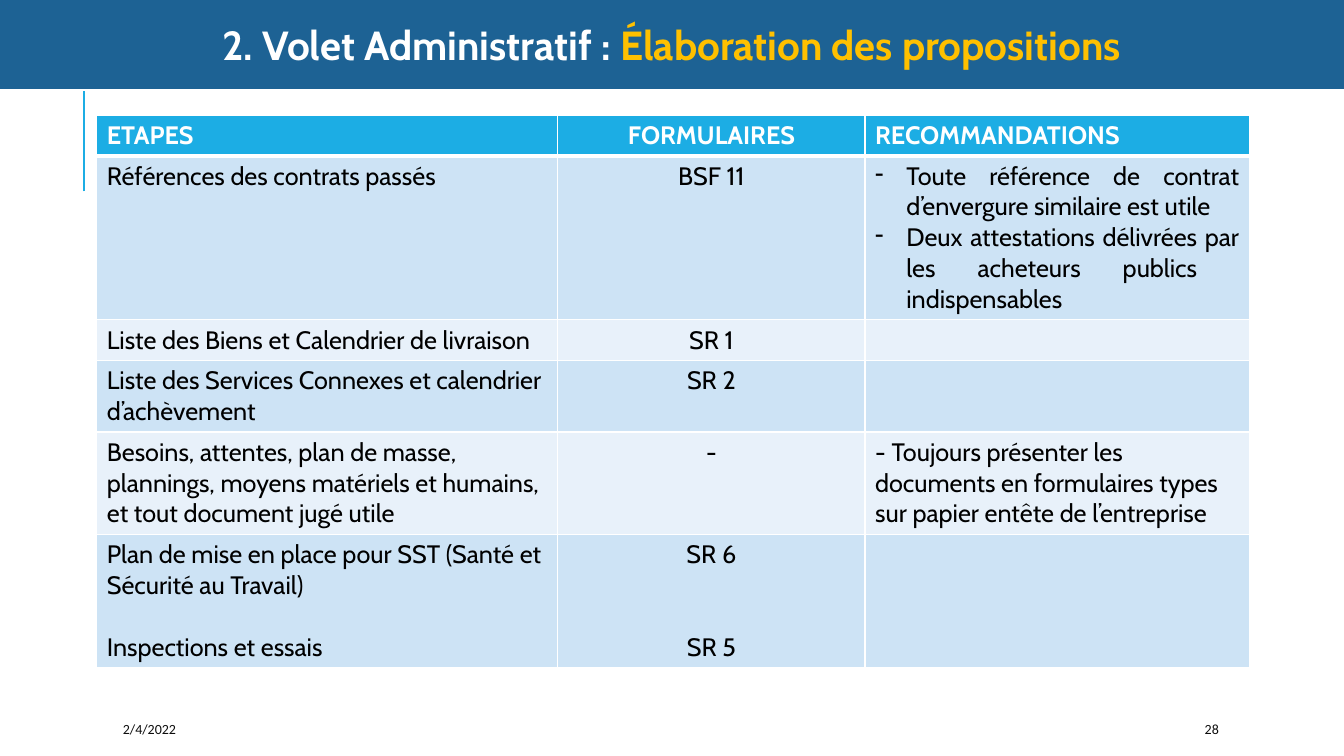
from lxml import etree
from pptx import Presentation
from pptx.dml.color import RGBColor
from pptx.enum.shapes import MSO_CONNECTOR as Conn
from pptx.enum.text import MSO_ANCHOR as Anchor, MSO_AUTO_SIZE as Auto, PP_ALIGN as Align
from pptx.oxml.ns import qn
from pptx.util import Inches, Pt

WIDE, HIGH = 13.33, 7.5
LINE = 4.07  # one 18 pt text line, in percent of the slide height
PAD = 1.33   # top and bottom cell margins, in percent

WHITE, BLACK, GOLD = "FFFFFF", "000000", "FFC000"
NAVY, SKY = "1D6294", "1CADE4"
BANDS = ["CDE3F5", "E8F1FA"]

HEADS = ["ETAPES", "FORMULAIRES", "RECOMMANDATIONS"]
# Each row: text lines it takes, then three cells, each a list of paragraphs.
ROWS = [
    (5, ["Références des contrats passés"], ["BSF 11"],
     ["Toute référence de contrat d’envergure similaire est utile",
      "Deux attestations délivrées par les acheteurs publics  indispensables"]),
    (1, ["Liste des Biens et Calendrier de livraison"], ["SR 1"], []),
    (2, ["Liste des Services Connexes et calendrier d’achèvement"], ["SR 2"], []),
    (3, ["Besoins, attentes, plan de masse, plannings, moyens matériels et humains, "
         "et tout document jugé utile"], ["-"],
     ["- Toujours présenter les documents en formulaires types sur papier entête "
      "de l’entreprise"]),
    (4, ["Plan de mise en place pour SST (Santé et Sécurité au Travail)",
         "Inspections et essais"], ["SR 6", "SR 5"], []),
]
ALIGNS = [Align.LEFT, Align.CENTER, Align.LEFT]
GAPS = [22, 44, 0]  # space before a second paragraph, by column


def rgb(code):
    return RGBColor.from_string(code)


def put(item, values):
    for key, value in values.items():
        setattr(item, key, value)


def across(share):
    return Inches(WIDE * share / 100)


def down(share):
    return Inches(HIGH * share / 100)


def box(x, y, w, h):
    """Turn percent shares of the slide into a left, top, width, height dict."""
    return dict(left=across(x), top=down(y), width=across(w), height=down(h))


class Deck:
    """Holds the text styles and the current slide."""

    styles = {
        "title": dict(name="Cabin", size=Pt(29), bold=True),
        "head": dict(name="Cabin", size=Pt(18), bold=True),
        "cell": dict(name="Cabin", size=Pt(18), bold=False),
        "foot": dict(name="Calibri", size=Pt(10), bold=False),
    }

    def __init__(self):
        self.show = Presentation()
        put(self.show, dict(slide_width=Inches(WIDE), slide_height=Inches(HIGH)))
        self.slide = self.show.slides.add_slide(self.show.slide_layouts[5])

    def say(self, para, text, style, color, **form):
        run = para.add_run()
        run.text = text
        put(run.font, self.styles[style])
        run.font.color.rgb = rgb(color)
        put(para, form)

    def title(self, parts, area):
        band = self.slide.shapes.title
        put(band, area)
        band.fill.solid()
        band.fill.fore_color.rgb = rgb(NAVY)
        frame = band.text_frame
        put(frame, dict(auto_size=Auto.NONE, word_wrap=True, vertical_anchor=Anchor.MIDDLE,
                        margin_left=Inches(0.11), margin_right=Inches(0.11),
                        margin_top=Inches(0.06), margin_bottom=Inches(0.06)))
        for text, color in parts:
            self.say(frame.paragraphs[0], text, "title", color, alignment=Align.CENTER)

    def note(self, text, area):
        frame = self.slide.shapes.add_textbox(**area).text_frame
        put(frame, dict(word_wrap=True, vertical_anchor=Anchor.MIDDLE))
        self.say(frame.paragraphs[0], text, "foot", "0D0D0D")

    def rule(self, x, top, end):
        line = self.slide.shapes.add_connector(
            Conn.STRAIGHT, across(x), down(end), across(x), down(top))
        line.line.color.rgb = rgb(SKY)
        line.line.width = Pt(1.5)
        etree.SubElement(line._element.spPr, qn("a:effectLst"))

    def table(self, x, y, widths, heights):
        area = box(x, y, sum(widths), sum(heights))
        grid = self.slide.shapes.add_table(len(heights), len(widths), **area).table
        for col, share in zip(grid.columns, widths):
            col.width = across(share)
        for row, share in zip(grid.rows, heights):
            row.height = down(share)
        return grid

    def cell(self, cell, texts, style, color, fill, edges, align, gap=0):
        """Fill one cell; edges are the left, right, top and bottom line widths."""
        self.edge(cell, edges)
        cell.fill.solid()
        cell.fill.fore_color.rgb = rgb(fill)
        frame = cell.text_frame
        for i, text in enumerate(texts):
            para = frame.add_paragraph() if i else frame.paragraphs[0]
            self.say(para, text, style, color, alignment=align,
                     space_before=Pt(gap if i else 0))

    def edge(self, cell, widths):
        props = cell._tc.get_or_add_tcPr()
        for side, width in zip("LRTB", widths):
            line = etree.SubElement(props, qn(f"a:ln{side}"), w=str(Pt(width)))
            paint = etree.SubElement(line, qn("a:solidFill"))
            etree.SubElement(paint, qn("a:srgbClr"), val=WHITE)

    def dash(self, cell):
        """Make the paragraphs of a cell a justified list with dashes."""
        hang = Inches(0.31)
        for para in cell.text_frame.paragraphs:
            para.alignment = Align.JUSTIFY
            props = para._p.get_or_add_pPr()
            props.set("marL", str(hang))
            props.set("indent", str(-hang))
            etree.SubElement(props, qn("a:buChar"), char="-")


def main():
    deck = Deck()
    deck.rule(6.22, 12, 25.33)
    deck.note("2/4/2022", box(8.4, 94.4, 17.7, 4))
    deck.note("28", box(88.9, 94.4, 7.95, 4))
    deck.title([("2. Volet Administratif : ", WHITE),
                ("Élaboration des propositions", GOLD)], box(0, 0, 100, 11.75))

    widths = [85.75 * part / 15 for part in (6, 4, 5)]
    heights = [PAD + LINE * count for count in [1] + [row[0] for row in ROWS]]
    grid = deck.table(7.2, 15.2, widths, heights)
    for c, (head, align) in enumerate(zip(HEADS, ALIGNS)):
        deck.cell(grid.cell(0, c), [head], "head", WHITE, SKY, (1, 1, 1, 3), align)
    for r, (_, *cells) in enumerate(ROWS, 1):
        edges = (1, 1, 3 if r == 1 else 1, 1)
        for c, (texts, align, gap) in enumerate(zip(cells, ALIGNS, GAPS)):
            deck.cell(grid.cell(r, c), texts, "cell", BLACK, BANDS[(r - 1) % 2],
                      edges, align, gap)
    deck.dash(grid.cell(1, 2))
    deck.show.save("out.pptx")


if __name__ == "__main__":
    main()
